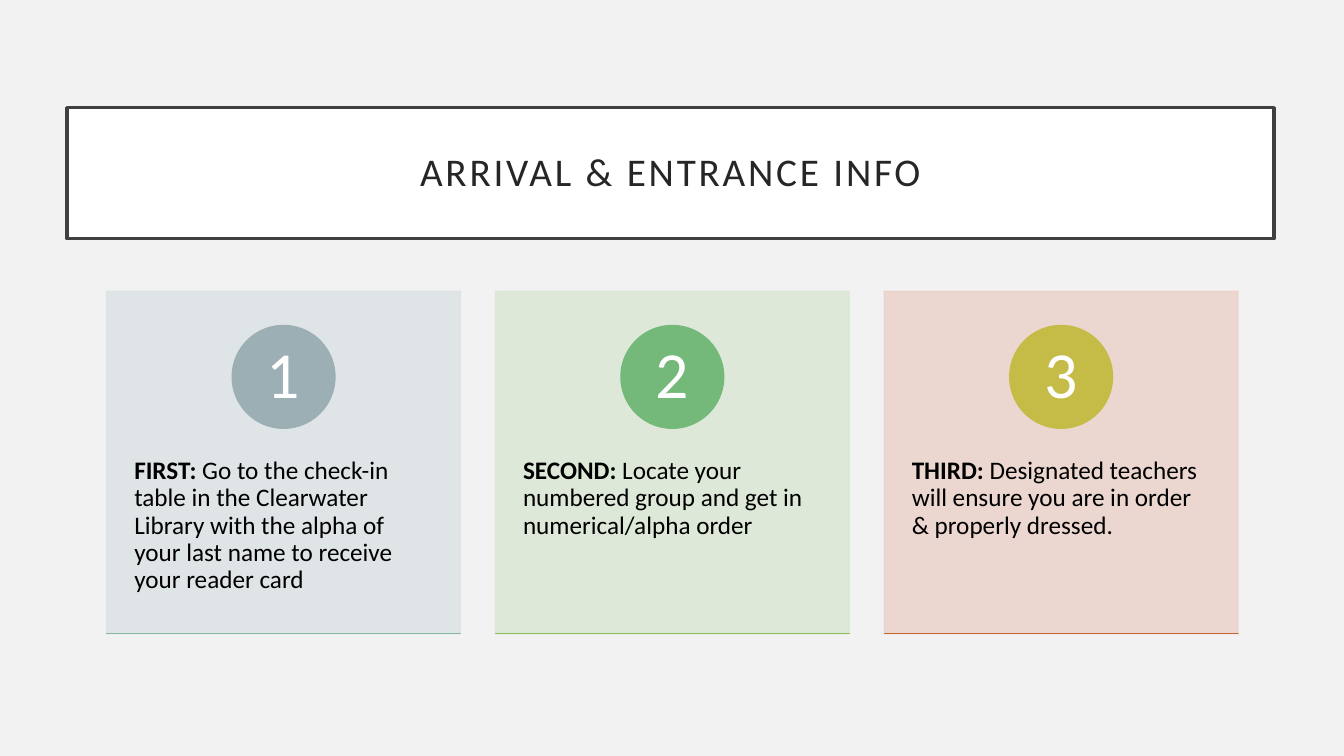
from dataclasses import dataclass

from lxml import etree
from pptx import Presentation
from pptx import util as u
from pptx.dml.color import RGBColor
from pptx.enum import shapes, text
from pptx.oxml.ns import qn


@dataclass(frozen=True)
class Theme:
    """Colours, font and type sizes of the slide."""
    font: str = "Calibri"
    background: str = "F2F2F2"
    white: str = "FFFFFF"
    frame: str = "404040"
    heading: str = "262626"
    body: str = "000000"
    heading_size: float = 28
    body_size: float = 18
    number_size: float = 47
    panels: tuple = ("DEE3E5", "DBE8D6", "EBD3CD")
    badges: tuple = ("9BAFB5", "74B97A", "C4BC47")
    rules: tuple = ("88B6A7", "8EBE5E", "C96731")


class Sheet:
    """Draws styled elements on one slide, with lengths in points."""

    def __init__(self, slide, theme):
        self.slide = slide
        self.theme = theme
        backdrop = slide.background.fill
        backdrop.solid()
        backdrop.fore_color.rgb = RGBColor.from_string(theme.background)

    def block(self, kind, box, fill, line=None, weight=1, opacity=100):
        """Draw a filled, outlined preset shape."""
        block = self.slide.shapes.add_shape(kind, *map(u.Pt, box))
        block.shadow.inherit = False
        block.fill.solid()
        block.fill.fore_color.rgb = RGBColor.from_string(fill)
        block.line.color.rgb = RGBColor.from_string(line or fill)
        block.line.width = u.Pt(weight)
        if opacity < 100:
            for color in block._element.spPr.iter(qn("a:srgbClr")):
                etree.SubElement(color, qn("a:alpha"), val=str(opacity * 1000))
        return block

    def label(self, box):
        """Add an empty text box."""
        return self.slide.shapes.add_textbox(*map(u.Pt, box))

    def letter(self, holder, runs, size, color, inset, centred=True, spacing=0):
        """Set (words, bold) runs as one paragraph in a shape."""
        frame = holder.text_frame
        frame.word_wrap = True
        frame.auto_size = text.MSO_AUTO_SIZE.NONE
        frame.margin_left = frame.margin_right = u.Pt(inset[0])
        frame.margin_top = frame.margin_bottom = u.Pt(inset[1])
        frame.vertical_anchor = text.MSO_ANCHOR.MIDDLE if centred else text.MSO_ANCHOR.TOP
        paragraph = frame.paragraphs[0]
        paragraph.alignment = text.PP_ALIGN.CENTER if centred else text.PP_ALIGN.LEFT
        paragraph.line_spacing = 0.9
        paragraph.font.name = self.theme.font
        paragraph.font.size = u.Pt(size)
        paragraph.font.color.rgb = RGBColor.from_string(color)
        for words, bold in runs:
            run = paragraph.add_run()
            run.text = words
            run.font.bold = bold
            if spacing:
                run._r.get_or_add_rPr().set("spc", str(spacing * 100))

    def heading(self, words):
        """Draw the framed slide heading."""
        theme = self.theme
        banner = self.block(shapes.MSO_SHAPE.RECTANGLE, (48, 77, 862, 93.6),
                            theme.white, theme.frame, 2.5)
        self.letter(banner, [(words, False)], theme.heading_size, theme.heading,
                    (14.4, 14.4), spacing=2)

    def card(self, index, order, instruction):
        """Draw one numbered step card."""
        theme = self.theme
        width, height, top, badge, digit = 252.7, 244.6, 208, 73.4, 51.8
        left = 76.2 + index * 277.7
        middle, badge_top = left + width / 2, top + 24.5
        rectangle = shapes.MSO_SHAPE.RECTANGLE
        self.block(rectangle, (left, top, width, height), theme.panels[index], opacity=90)
        step = self.label((left, 301, width, 146.8))
        self.letter(step, [(order + " ", True), (instruction, False)], theme.body_size,
                    theme.body, (19.7, 26), centred=False)
        self.block(shapes.MSO_SHAPE.OVAL, (middle - badge / 2, badge_top, badge, badge),
                   theme.badges[index])
        number = self.label((middle - digit / 2, badge_top + (badge - digit) / 2, digit, digit))
        self.letter(number, [(str(index + 1), False)], theme.number_size, theme.white, (5.8, 0.9))
        self.block(rectangle, (left, top + height, width, 0.01), theme.rules[index])


def main():
    """Build and save the slide."""
    deck = Presentation()
    deck.slide_width, deck.slide_height = u.Pt(960), u.Pt(540)
    sheet = Sheet(deck.slides.add_slide(deck.slide_layouts[6]), Theme())
    sheet.heading("ARRIVAL & ENTRANCE INFO")
    steps = [
        ("FIRST:", "Go to the check-in table in the Clearwater Library with the alpha "
                   "of your last name to receive your reader card"),
        ("SECOND:", "Locate your numbered group and get in numerical/alpha order"),
        ("THIRD:", "Designated teachers will ensure you are in order & properly dressed."),
    ]
    for index, (order, instruction) in enumerate(steps):
        sheet.card(index, order, instruction)
    deck.save("out.pptx")


if __name__ == "__main__":
    main()
